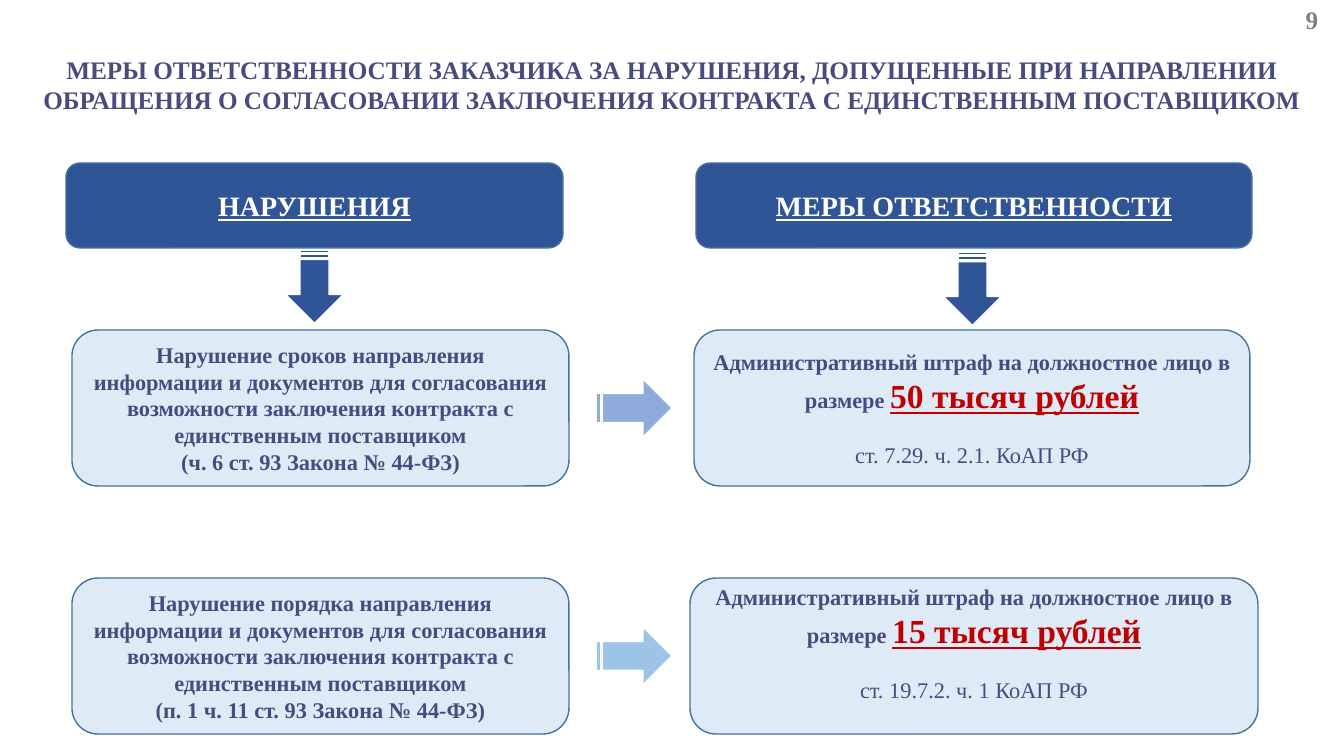
from pptx import Presentation
from pptx.dml.color import RGBColor
from pptx.enum.shapes import MSO_SHAPE
from pptx.enum.text import MSO_ANCHOR, PP_ALIGN
from pptx.util import Emu, Pt

ROUNDED = MSO_SHAPE.ROUNDED_RECTANGLE
ARROW = MSO_SHAPE.STRIPED_RIGHT_ARROW
MIDDLE = MSO_ANCHOR.MIDDLE
CENTER = PP_ALIGN.CENTER

PX = 914400 / 100.8
FONT = "Times New Roman"
COLORS = {
    "text": "474C7F", "white": "FFFFFF", "gray": "808080", "red": "C00000",
    "header": "2F5597", "card": "DEEBF7", "border": "43739E",
    "deadline_arrow": "8FAADC", "procedure_arrow": "9DC3E6",
}

prs = Presentation()
prs.slide_width, prs.slide_height = Emu(round(1344 * PX)), Emu(round(756 * PX))
slide = prs.slides.add_slide(prs.slide_layouts[6])


def add_block(kind, box, fill=None, line=None):
    """Add a preset shape, or a text box when kind is None; box is in px."""
    place = [Emu(round(value * PX)) for value in box]
    if kind is None:
        block = slide.shapes.add_textbox(*place)
    else:
        block = slide.shapes.add_shape(kind, *place)
        block.shadow.inherit = False
        block.fill.solid()
        block.fill.fore_color.rgb = RGBColor.from_string(COLORS[fill])
        block.line.color.rgb = RGBColor.from_string(COLORS[line])
        block.line.width = Pt(1)
    block.text_frame.word_wrap = True
    block.text_frame.vertical_anchor = MIDDLE
    return block


def write(paragraph, text, size, color="text", bold=True, underline=False):
    """Append one formatted run to a centred paragraph."""
    paragraph.alignment = CENTER
    run = paragraph.add_run()
    run.text = text
    run.font.name, run.font.size = FONT, Pt(size)
    run.font.bold, run.font.underline = bold, underline
    run.font.color.rgb = RGBColor.from_string(COLORS[color])


# Title and page number
title = add_block(None, (0, 42, 1344, 85))
write(title.text_frame.paragraphs[0],
      "МЕРЫ ОТВЕТСТВЕННОСТИ ЗАКАЗЧИКА ЗА НАРУШЕНИЯ, ДОПУЩЕННЫЕ ПРИ НАПРАВЛЕНИИ "
      "ОБРАЩЕНИЯ О СОГЛАСОВАНИИ ЗАКЛЮЧЕНИЯ КОНТРАКТА С ЕДИНСТВЕННЫМ ПОСТАВЩИКОМ", 18)
page_number = add_block(None, (1280, 0, 64, 38))
write(page_number.text_frame.paragraphs[0], "9", 18, "gray")

# Column headers with arrows pointing down
columns = [
    ("НАРУШЕНИЯ", 66, 497, 278, 258),
    ("МЕРЫ ОТВЕТСТВЕННОСТИ", 696, 556, 936, 260),
]
for heading, left, width, arrow_left, arrow_top in columns:
    header = add_block(ROUNDED, (left, 163, width, 85), "header", "border")
    write(header.text_frame.paragraphs[0], heading, 20, "white", underline=True)
    down_arrow = add_block(ARROW, (arrow_left, arrow_top, 73, 58), "header", "white")
    down_arrow.rotation = 90

# Rows: violation, arrow, penalty
rows = [
    (330, "сроков", "(ч. 6 ст. 93 Закона № 44-ФЗ)", "deadline_arrow",
     694, 556, "50 тысяч рублей", "ст. 7.29. ч. 2.1. КоАП РФ", 5, 5),
    (578, "порядка", "(п. 1 ч. 11 ст. 93 Закона № 44-ФЗ)", "procedure_arrow",
     690, 568, "15 тысяч рублей", "ст. 19.7.2. ч. 1 КоАП РФ", 0, 26),
]
for (top, subject, law, arrow_color, left, width,
     fine, article, inset_top, inset_bottom) in rows:
    violation = add_block(ROUNDED, (72, top, 497, 156), "card", "border").text_frame
    write(violation.paragraphs[0],
          f"Нарушение {subject} направления информации и документов для согласования "
          "возможности заключения контракта с единственным поставщиком", 16)
    write(violation.add_paragraph(), law, 16)

    add_block(ARROW, (593, top + 49, 79, 58), arrow_color, "white")

    penalty = add_block(ROUNDED, (left, top, width, 156), "card", "border").text_frame
    penalty.margin_top = Emu(round(inset_top * PX))
    penalty.margin_bottom = Emu(round(inset_bottom * PX))
    amount = penalty.paragraphs[0]
    write(amount, "Административный штраф на должностное лицо в размере ", 16)
    write(amount, fine, 24, "red", underline=True)
    basis = penalty.add_paragraph()
    basis.space_before = Pt(18)
    write(basis, article, 16, bold=False)

prs.save("out.pptx")
